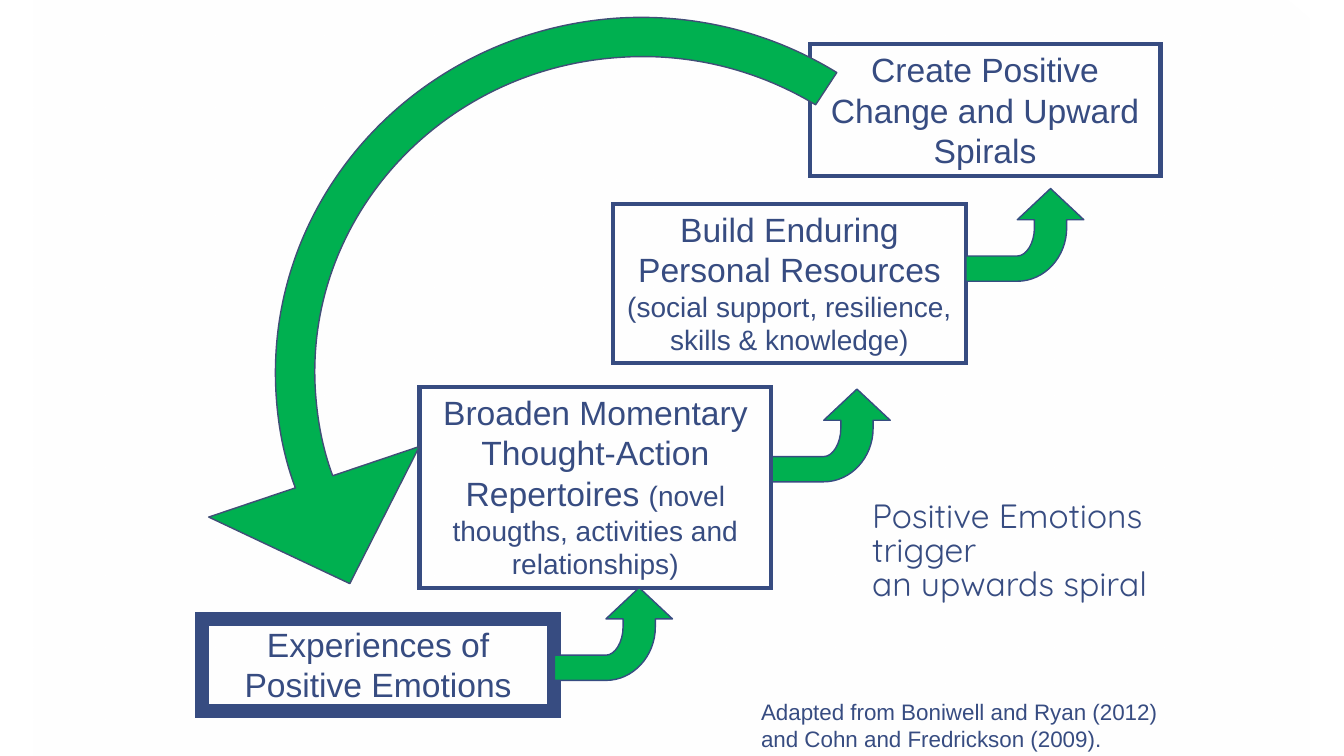
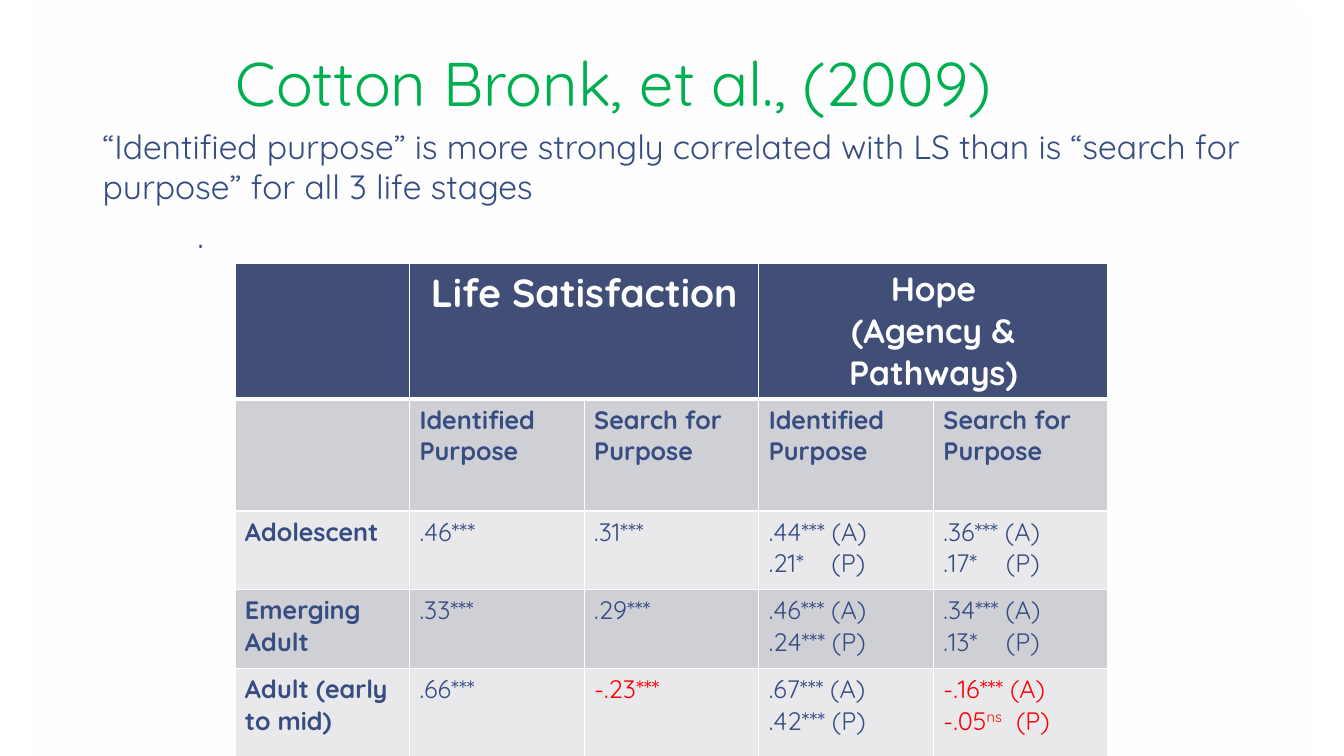
from lxml import etree
from pptx import Presentation
from pptx.dml.color import RGBColor
from pptx.enum import shapes, text
from pptx.oxml import ns
from pptx.util import Inches, Pt

NAVY = RGBColor(0x37, 0x4C, 0x81)
SLATE = RGBColor(0x41, 0x4E, 0x77)
GREEN = RGBColor(0x00, 0xB0, 0x50)
WHITE = RGBColor(0xFF, 0xFF, 0xFF)
RED = RGBColor(0xFF, 0x00, 0x00)
BANDS = (RGBColor(0xE9, 0xE9, 0xEC), RGBColor(0xCF, 0xD0, 0xD6))

HEADING = "Quicksand"
BODY = "Arial"
TITLE_MARGINS = (0.13, 0.07)
CENTER = text.PP_ALIGN.CENTER
GROW = text.MSO_AUTO_SIZE.SHAPE_TO_FIT_TEXT
FIXED = text.MSO_AUTO_SIZE.NONE
SMALL = {"size": Pt(20)}

# Each box: left, top, width, height, border points, paragraphs of (text, format) runs
STAGES = [
    (2, 6.14, 3.5, 0.91, 10,
     [[("Experiences of", {})], [("Positive Emotions", {})]]),
    (4.16, 3.84, 3.49, 1.99, 3,
     [[("Broaden Momentary", {})], [("Thought-Action", {})],
      [("Repertoires ", {}),
       ("(novel thougths, activities and relationships)", SMALL)]]),
    (6.08, 2.02, 3.5, 1.58, 3,
     [[("Build Enduring", {})],
      [("Personal Resources ", {}),
       ("(social support, resilience, skills & knowledge)", SMALL)]]),
    (8.03, 0.44, 3.48, 1.31, 3,
     [[("Create Positive Change and Upward Spirals", {})]]),
]

# Outlines: two numbers make a line, six make a cubic curve
RETURN_ARROW = [
    (3.3, 4.72), (3.2, 4.45, 3.15, 4.18, 3.13, 3.9),
    (3.01, 2.18, 4.36, 0.69, 6.14, 0.57), (6.83, 0.52, 7.51, 0.69, 8.09, 1.04),
    (8.3, 0.72), (7.65, 0.32, 6.89, 0.13, 6.12, 0.18),
    (4.12, 0.32, 2.61, 1.99, 2.74, 3.93), (2.76, 4.24, 2.82, 4.55, 2.93, 4.84),
    (2.07, 5.13), (3.47, 5.79), (4.16, 4.43), (3.3, 4.72),
]
STEP_ARROW = [
    (0, 0), (0.33, 0.31), (0.16, 0.31), (0.16, 0.39),
    (0.16, 0.68, -0.06, 0.92, -0.33, 0.92), (-0.84, 0.92), (-0.84, 0.67),
    (-0.33, 0.67), (-0.24, 0.67, -0.16, 0.54, -0.16, 0.39),
    (-0.16, 0.31), (-0.33, 0.31), (0, 0),
]
STEP_TIPS = [(6.34, 5.83), (10.42, 1.87), (8.5, 3.86)]

TABLE_WIDTH = 8.66
ROW_HEIGHTS = [1.35, 1.11, 0.78, 0.78, 1.11]
TAB_STOP, WIDE_TAB_STOP = 0.62, 0.72
PURPOSES = ["Identified Purpose", "Search for Purpose"]
CORRELATIONS = [
    ["", "Life Satisfaction", "", "Hope\n(Agency & Pathways)", ""],
    [""] + PURPOSES * 2,
    ["Adolescent", ".46***", ".31***", ".44*** (A)\n.21*\t(P)", ".36*** (A)\n.17*\t(P)"],
    ["Emerging Adult", ".33***", ".29***", ".46*** (A)\n.24*** (P)",
     ".34*** (A)\n.13*\t(P)"],
    ["Adult (early to mid)", ".66***", "-.23***", ".67*** (A)\n.42*** (P)",
     "-.16*** (A)\n-.05^ns^\t(P)"],
]


def add_run(paragraph, content, **formats):
    run = paragraph.add_run()
    run.text = content
    color = formats.pop("color", NAVY)
    for name, value in formats.items():
        setattr(run.font, name, value)
    run.font.color.rgb = color
    return run


def write_paragraphs(frame, paragraphs, align=None, **formats):
    for index, runs in enumerate(paragraphs):
        paragraph = frame.paragraphs[0] if index == 0 else frame.add_paragraph()
        paragraph.alignment = align
        for content, changes in runs:
            add_run(paragraph, content, **{**formats, **changes})


def add_text(slide, box, content, margins=(0.1, 0.05), anchor=text.MSO_ANCHOR.TOP,
             spacing=None, fit=FIXED, **formats):
    frame = slide.shapes.add_textbox(*map(Inches, box)).text_frame
    horizontal, vertical = map(Inches, margins)
    settings = {"word_wrap": True, "auto_size": fit, "vertical_anchor": anchor,
                "margin_left": horizontal, "margin_right": horizontal,
                "margin_top": vertical, "margin_bottom": vertical}
    for name, value in settings.items():
        setattr(frame, name, value)
    paragraph = frame.paragraphs[0]
    paragraph.line_spacing = spacing
    for index, line in enumerate(content.split("\n")):
        if index:
            paragraph.add_line_break()
        add_run(paragraph, line, **formats)


def add_rectangle(slide, box):
    rectangle = slide.shapes.add_shape(shapes.MSO_SHAPE.RECTANGLE, *map(Inches, box))
    rectangle.shadow.inherit = False
    return rectangle


def add_master_veil(deck, slide):
    """Put a white, partly clear gradient panel behind every slide."""
    veil = add_rectangle(slide, (0.33, 0, 12.66, 7.5))
    veil.line.fill.background()
    veil.fill.gradient()
    veil.fill.gradient_angle = 230
    for stop, position, opacity in zip(veil.fill.gradient_stops, (0, 1), (0, 55)):
        stop.position = position
        stop.color.rgb = WHITE
    colors = veil.element.spPr.findall(".//" + ns.qn("a:gs") + "/" + ns.qn("a:srgbClr"))
    for color, opacity in zip(colors, (0, 55)):
        etree.SubElement(color, ns.qn("a:alpha"), val=str(opacity * 1000))
    # Index 2 is just after the two group property elements
    deck.slide_master.shapes.element.insert(2, veil.element) if hasattr(
        deck.slide_master.shapes, "element") else \
        deck.slide_master.element.cSld.spTree.insert(2, veil.element)


def add_stage(slide, left, top, width, height, border, paragraphs):
    stage = add_rectangle(slide, (left, top, width, height))
    stage.fill.background()
    stage.line.color.rgb = NAVY
    stage.line.width = Pt(border)
    etree.SubElement(stage.line._get_or_add_ln(), ns.qn("a:miter"), lim="800000")
    frame = stage.text_frame
    settings = {"word_wrap": True, "auto_size": GROW,
                "vertical_anchor": text.MSO_ANCHOR.TOP}
    for name, value in settings.items():
        setattr(frame, name, value)
    write_paragraphs(frame, paragraphs, CENTER, name=BODY, size=Pt(24))


def add_arrow(slide, outline, line_color, origin=(0, 0)):
    """Draw the outline's corners, then bend its curved segments."""
    segments = [[(Inches(x + origin[0]), Inches(y + origin[1]))
                 for x, y in zip(values[::2], values[1::2])] for values in outline]
    builder = slide.shapes.build_freeform(*segments[0][0], scale=1.0)
    builder.add_line_segments([points[-1] for points in segments[1:]], close=True)
    arrow = builder.convert_to_shape()
    lines = arrow.element.spPr.findall(".//" + ns.qn("a:lnTo"))
    for line, points in zip(lines, segments[1:]):
        if len(points) == 1:
            continue
        line.tag = ns.qn("a:cubicBezTo")
        for index, (x, y) in enumerate(points[:-1]):
            control = etree.Element(ns.qn("a:pt"), x=str(x - arrow.left),
                                    y=str(y - arrow.top))
            line.insert(index, control)
    arrow.shadow.inherit = False
    arrow.fill.solid()
    arrow.fill.fore_color.rgb = GREEN
    arrow.line.color.rgb = line_color
    arrow.line.width = Pt(1)


def add_tab_stop(paragraph, position):
    stops = etree.SubElement(paragraph._p.get_or_add_pPr(), ns.qn("a:tabLst"))
    etree.SubElement(stops, ns.qn("a:tab"), pos=str(Inches(position)), algn="l")


def style_cell(cell, color, bottom):
    """Give the cell white borders, then its fill."""
    properties = cell._tc.get_or_add_tcPr()
    for side, width in {"L": 1, "R": 1, "T": 1, "B": bottom}.items():
        line = etree.SubElement(properties, ns.qn(f"a:ln{side}"), w=str(Pt(width)))
        fill = etree.SubElement(line, ns.qn("a:solidFill"))
        etree.SubElement(fill, ns.qn("a:srgbClr"), val=str(WHITE))
    cell.fill.solid()
    cell.fill.fore_color.rgb = color


def write_cell(cell, content, align=None, **formats):
    """Write one paragraph a line; text between carets is superscript."""
    frame = cell.text_frame
    for index, line in enumerate(content.split("\n")):
        paragraph = frame.paragraphs[0] if index == 0 else frame.add_paragraph()
        paragraph.alignment = align
        if "\t" in line:
            add_tab_stop(paragraph, WIDE_TAB_STOP if "^" in line else TAB_STOP)
        for part, piece in enumerate(line.split("^")):
            run = add_run(paragraph, piece, name=HEADING, **formats)
            if part % 2:
                run._r.get_or_add_rPr().set("baseline", "30000")


def add_correlations(slide):
    rows, columns = len(CORRELATIONS), len(CORRELATIONS[0])
    table = slide.shapes.add_table(
        rows, columns, Inches(2.33), Inches(2.61),
        Inches(TABLE_WIDTH), Inches(sum(ROW_HEIGHTS))).table
    for column in table.columns:
        column.width = Inches(TABLE_WIDTH / columns)
    for row, height in zip(table.rows, ROW_HEIGHTS):
        row.height = Inches(height)
    for first in (1, 3):
        table.cell(0, first).merge(table.cell(0, first + 1))

    for r, values in enumerate(CORRELATIONS):
        for c, content in enumerate(values):
            cell = table.cell(r, c)
            style_cell(cell, BANDS[r % 2] if r else SLATE, 1 if r else 3)
            if not content:
                continue
            if r == 0:
                write_cell(cell, content, CENTER, bold=True, color=WHITE,
                           size=Pt(28 if c == 1 else 24))
            else:
                write_cell(cell, content, bold=r == 1 or c == 0, size=Pt(18),
                           color=RED if content.startswith("-") else NAVY)


def build_spiral(slide):
    add_text(slide, (8.52, 4.9, 3.04, 1.88),
             "Positive Emotions trigger\nan upwards spiral", TITLE_MARGINS,
             spacing=0.85, name=HEADING, size=Pt(24))
    for stage in STAGES:
        add_stage(slide, *stage)
    add_arrow(slide, RETURN_ARROW, SLATE)
    for tip in STEP_TIPS:
        add_arrow(slide, STEP_ARROW, NAVY, tip)
    add_text(slide, (7.45, 6.88, 4.17, 0.64),
             "Adapted from Boniwell and Ryan (2012) and Cohn and Fredrickson (2009).",
             fit=GROW, name=BODY, size=Pt(16))


def build_study(slide):
    add_text(slide, (2.21, 0, 9, 1.25), "Cotton Bronk, et al., (2009)", TITLE_MARGINS,
             text.MSO_ANCHOR.BOTTOM, 0.85, name=HEADING, size=Pt(44), color=GREEN)
    add_text(slide, (1.83, 2.09, 9.84, 4.73), ".", TITLE_MARGINS, spacing=0.95,
             name=HEADING, size=Pt(24))
    add_correlations(slide)
    add_text(slide, (0.92, 1.2, 12.21, 1.31),
             "“Identified purpose” is more strongly correlated with LS than is "
             "“search for purpose” for all 3 life stages",
             fit=GROW, name=HEADING, size=Pt(24))


def main():
    deck = Presentation()
    deck.slide_width, deck.slide_height = Inches(13.33), Inches(7.5)
    spiral, study = (deck.slides.add_slide(deck.slide_layouts[6]) for _ in range(2))
    add_master_veil(deck, spiral)
    build_spiral(spiral)
    build_study(study)
    deck.save("out.pptx")


if __name__ == "__main__":
    main()
